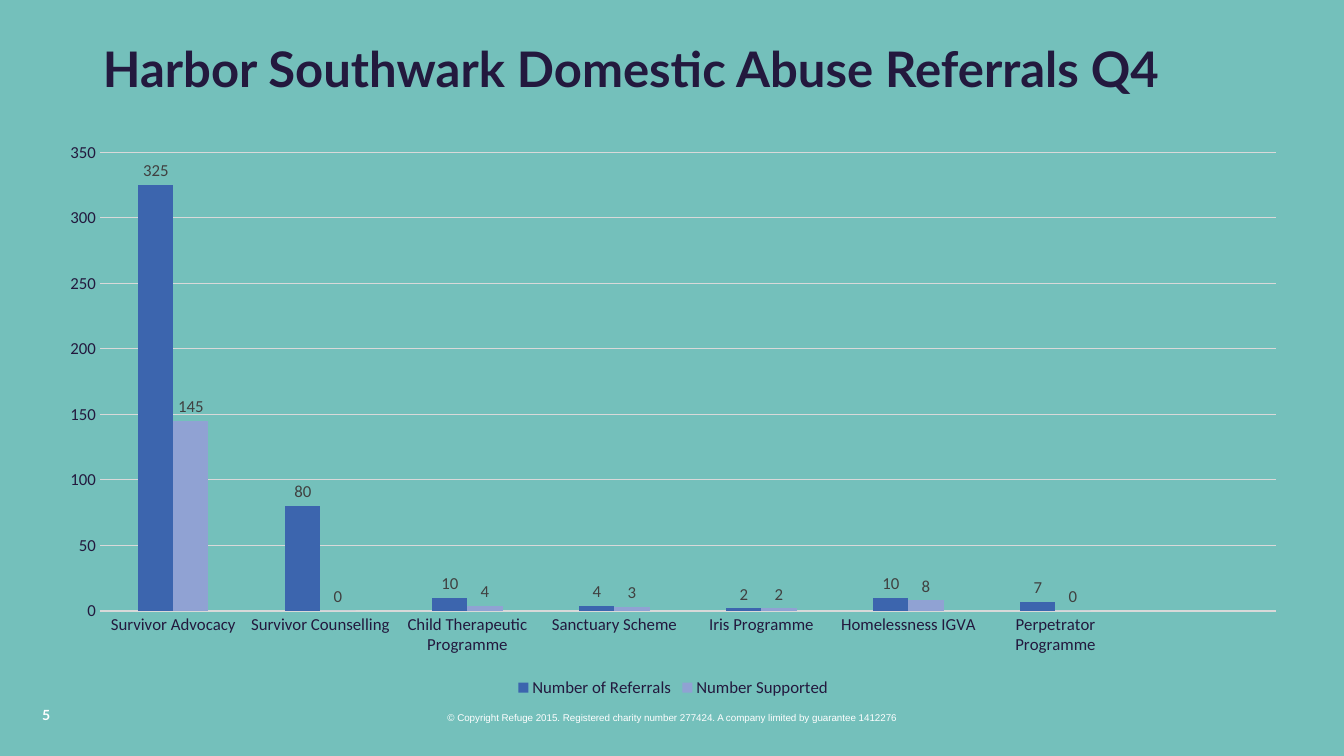
from pptx import Presentation
from pptx.chart.data import CategoryChartData as Data
from pptx.dml.color import RGBColor
from pptx.enum.chart import XL_CHART_TYPE as Kind, XL_LABEL_POSITION as Spot
from pptx.enum.chart import XL_LEGEND_POSITION as Side, XL_TICK_MARK as Tick
from pptx.enum.text import MSO_ANCHOR as Anchor, MSO_AUTO_SIZE as Fit, PP_ALIGN as Align
from pptx.util import Cm, Pt

INK, WHITE, GRID, LABEL = "23193E", "FFFFFF", "D9D9D9", "404040"


def paint(color, code):
    color.rgb = RGBColor.from_string(code)


def fill(part, code):
    part.fill.solid()
    paint(part.fill.fore_color, code)


class Page:
    def __init__(self, deck, back):
        self.slide = deck.slides.add_slide(deck.slide_layouts[5])
        fill(self.slide.background, back)

    def style(self, font, size, code, name="Calibri", bold=False):
        font.size, font.name, font.bold = Pt(size), name, bold
        paint(font.color, code)

    def label(self, shape, text, size, code, name, bold=False, align=Align.LEFT):
        frame = shape.text_frame
        frame.text = text
        frame.word_wrap = True
        frame.auto_size = Fit.NONE
        frame.vertical_anchor = Anchor.TOP
        para = frame.paragraphs[0]
        para.alignment = align
        self.style(para.font, size, code, name, bold)
        return para

    def title(self, text, left, top, width, height):
        shape = self.slide.shapes.title
        shape.left, shape.top = Cm(left), Cm(top)
        shape.width, shape.height = Cm(width), Cm(height)
        self.label(shape, text, 35, INK, "Lato", True).line_spacing = 0.9

    def text(self, text, left, top, width, height, *look):
        box = self.slide.shapes.add_textbox(Cm(left), Cm(top), Cm(width), Cm(height))
        self.label(box, text, *look)

    def line(self, edge):
        paint(edge.color, GRID)
        edge.width = Pt(0.75)

    def chart(self, cats, rows, left, top, width, height):
        data = Data()
        data.categories = cats
        for name, code, vals in rows:
            data.add_series(name, vals)
        chart = self.slide.shapes.add_chart(
            Kind.COLUMN_CLUSTERED, Cm(left), Cm(top), Cm(width), Cm(height), data).chart
        self.style(chart.font, 10, "000000")
        chart.has_title = False
        chart.has_legend = True
        chart.legend.position = Side.BOTTOM
        chart.legend.include_in_layout = False
        self.style(chart.legend.font, 12, INK)
        for axis in (chart.category_axis, chart.value_axis):
            axis.major_tick_mark = axis.minor_tick_mark = Tick.NONE
            self.style(axis.tick_labels.font, 12, INK)
        self.line(chart.category_axis.format.line)
        chart.value_axis.format.line.fill.background()
        self.line(chart.value_axis.major_gridlines.format.line)
        plot = chart.plots[0]
        plot.gap_width, plot.overlap = 219, 0
        plot.vary_by_categories = False
        for bars, (name, code, vals) in zip(plot.series, rows):
            fill(bars.format, code)
            bars.invert_if_negative = False
            tags = bars.data_labels
            tags.show_value = True
            tags.position = Spot.OUTSIDE_END
            self.style(tags.font, 12, LABEL)


def main():
    deck = Presentation()
    deck.slide_width, deck.slide_height = Cm(33.87), Cm(19.05)
    page = Page(deck, "74C0BB")
    page.text("© Copyright Refuge 2015. Registered charity number 277424. "
              "A company limited by guarantee 1412276",
              0, 17.81, 33.87, 0.56, 7, WHITE, "Arial", False, Align.CENTER)
    page.title("Harbor Southwark Domestic Abuse Referrals Q4", 2.34, 1.02, 29.59, 3.68)
    cats = ["Survivor Advocacy", "Survivor Counselling", "Child Therapeutic Programme",
            "Sanctuary Scheme", "Iris Programme", "Homelessness IGVA",
            "Perpetrator Programme", ""]
    rows = [("Number of Referrals", "3C65AE", (325, 80, 10, 4, 2, 10, 7, None)),
            ("Number Supported", "90A2D3", (145, 0, 4, 3, 2, 8, 0, None))]
    page.chart(cats, rows, 1.14, 3.3, 31.65, 14.38)
    page.text("5", 0.81, 17.68, 7.62, 1.02, 10, WHITE, "Lato", True)
    deck.save("out.pptx")


if __name__ == "__main__":
    main()
